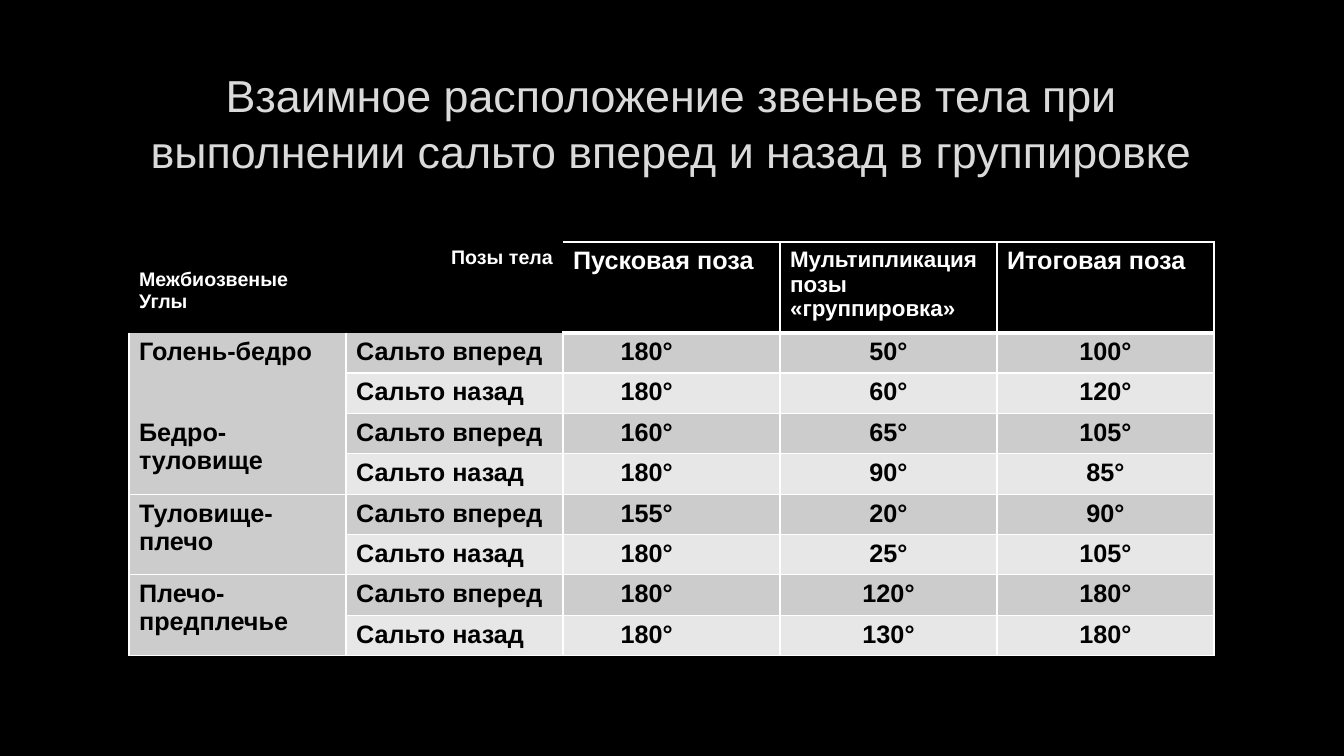
from lxml import etree
from pptx import Presentation
from pptx.dml.color import RGBColor
from pptx.enum.text import MSO_ANCHOR, PP_ALIGN
from pptx.oxml.ns import qn
from pptx.util import Emu, Pt

LEFT, CENTER, RIGHT = PP_ALIGN.LEFT, PP_ALIGN.CENTER, PP_ALIGN.RIGHT
MIDDLE = MSO_ANCHOR.MIDDLE
BLACK = RGBColor(0x00, 0x00, 0x00)
WHITE = RGBColor(0xFF, 0xFF, 0xFF)
TITLE_GRAY = RGBColor(0xDA, 0xDA, 0xDA)
DARK_BAND = RGBColor(0xCC, 0xCC, 0xCC)
LIGHT_BAND = RGBColor(0xE7, 0xE7, 0xE7)
FONT = "Arial"
EMU_PER_PX = 914400 / 100.8

TITLE = "Взаимное расположение звеньев тела при выполнении сальто вперед и назад в группировке"
CORNER = "Позы тела\nМежбиозвеные\nУглы"
POSES = [("Пусковая поза", 18), ("Мультипликация позы «группировка»", 16), ("Итоговая поза", 18)]
DIRECTIONS = ["Сальто вперед", "Сальто назад"]
JOINTS = [
    ("Голень-бедро", [(180, 50, 100), (180, 60, 120)]),
    ("Бедро-туловище", [(160, 65, 105), (180, 90, 85)]),
    ("Туловище-плечо", [(155, 20, 90), (180, 25, 105)]),
    ("Плечо-предплечье", [(180, 120, 180), (180, 130, 180)]),
]
COL_W, HEAD_H, ROW_H = 217, 85, 38


def px(n):
    return Emu(round(n * EMU_PER_PX))


def write(tf, text, size, color, bold=False, align=LEFT):
    tf.text = text
    for p in tf.paragraphs:
        p.alignment = align
        for r in p.runs:
            r.font.name = FONT
            r.font.size = Pt(size)
            r.font.bold = bold
            r.font.color.rgb = color


def add_title(s):
    tf = s.shapes.add_textbox(px(101), px(68), px(1141), px(107)).text_frame
    tf.word_wrap = True
    tf.vertical_anchor = MIDDLE
    write(tf, TITLE, 32, TITLE_GRAY, align=CENTER)
    tf.paragraphs[0].line_spacing = 1.05


def border_widths(row, col):
    if row == 0:
        if col < 2:
            return {"L": 0, "R": 0, "T": 0, "B": 0}
        return {"L": int(col > 2), "R": 1, "T": 1, "B": 3}
    top = bottom = 1
    if row == 1:
        top = 0 if col < 2 else 3
    if col == 0:
        top = int(row > 3)
        bottom = int(row > 2)
    return {"L": 1, "R": 1, "T": top, "B": bottom}


def set_borders(cell, widths):
    tc_pr = cell._tc.get_or_add_tcPr()
    for i, (side, width) in enumerate(widths.items()):
        ln = etree.Element(qn(f"a:ln{side}"), w=str(Pt(width)))
        if width:
            fill = etree.SubElement(ln, qn("a:solidFill"))
            etree.SubElement(fill, qn("a:srgbClr"), val=str(WHITE))
        else:
            etree.SubElement(ln, qn("a:noFill"))
        tc_pr.insert(i, ln)


def band_color(row, col):
    if row == 0:
        return BLACK
    return DARK_BAND if col == 0 or row % 2 else LIGHT_BAND


def add_angle_table(s):
    rows, cols = 1 + 2 * len(JOINTS), 2 + len(POSES)
    height = HEAD_H + ROW_H * (rows - 1)
    table = s.shapes.add_table(rows, cols, px(129), px(242), px(COL_W * cols), px(height)).table
    table.first_row = False
    table.horz_banding = False
    for column in table.columns:
        column.width = px(COL_W)
    for i, row in enumerate(table.rows):
        row.height = px(ROW_H if i else HEAD_H)
        for j, cell in enumerate(row.cells):
            cell.fill.solid()
            cell.fill.fore_color.rgb = band_color(i, j)
            set_borders(cell, border_widths(i, j))

    corner = table.cell(0, 0)
    corner.merge(table.cell(0, 1))
    write(corner.text_frame, CORNER, 14, WHITE, True)
    corner.text_frame.paragraphs[0].alignment = RIGHT
    for j, (pose, size) in enumerate(POSES, 2):
        write(table.cell(0, j).text_frame, pose, size, WHITE, True)

    for k, (joint, angles) in enumerate(JOINTS):
        top = 1 + 2 * k
        label = table.cell(top, 0)
        label.merge(table.cell(top + 1, 0))
        write(label.text_frame, joint, 18, BLACK, True)
        for i, (direction, values) in enumerate(zip(DIRECTIONS, angles), top):
            write(table.cell(i, 1).text_frame, direction, 18, BLACK, True)
            for j, value in enumerate(values, 2):
                write(table.cell(i, j).text_frame, f"{value}°", 18, BLACK, True, CENTER)
            table.cell(i, 2).margin_right = px(60)


def main():
    prs = Presentation()
    prs.slide_width, prs.slide_height = px(1344), px(756)
    s = prs.slides.add_slide(prs.slide_layouts[6])
    s.background.fill.solid()
    s.background.fill.fore_color.rgb = BLACK
    add_title(s)
    add_angle_table(s)
    prs.save("out.pptx")


if __name__ == "__main__":
    main()
